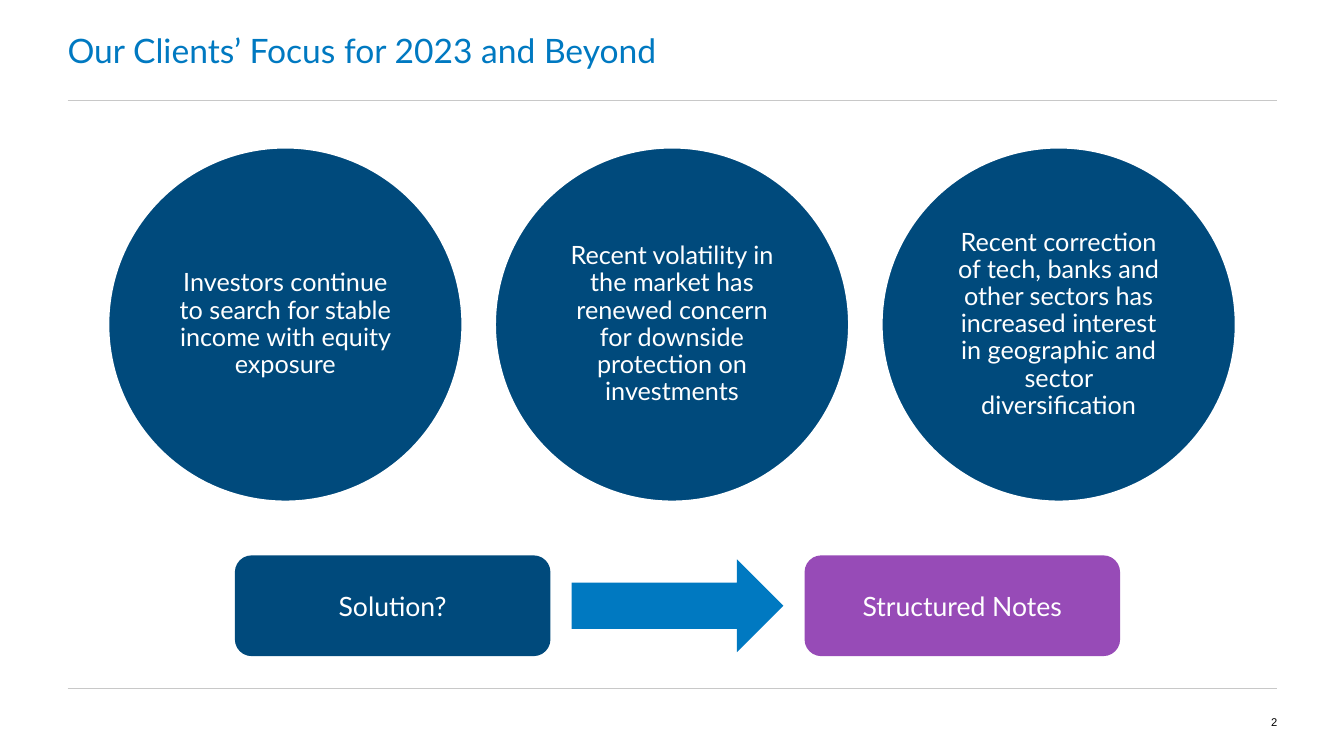
from dataclasses import dataclass

from pptx import Presentation
from pptx.dml.color import RGBColor
from pptx.enum.shapes import MSO_CONNECTOR, MSO_SHAPE
from pptx.enum.text import MSO_ANCHOR, MSO_AUTO_SIZE, PP_ALIGN
from pptx.oxml.ns import qn
from pptx.shapes.autoshape import Shape
from pptx.slide import Slide
from pptx.text.text import TextFrame
from pptx.util import Inches, Pt


@dataclass(frozen=True)
class Theme:
    font: str = "Lato"
    number_font: str = "Arial"
    navy: RGBColor = RGBColor(0x00, 0x4A, 0x7C)
    blue: RGBColor = RGBColor(0x00, 0x79, 0xC1)
    purple: RGBColor = RGBColor(0x97, 0x4B, 0xB7)
    rule: RGBColor = RGBColor(0xC8, 0xC8, 0xC8)
    white: RGBColor = RGBColor(0xFF, 0xFF, 0xFF)
    black: RGBColor = RGBColor(0x00, 0x00, 0x00)
    title_size: int = 24
    circle_size: int = 18
    box_size: int = 19
    number_size: int = 8


@dataclass(frozen=True)
class Box:
    left: float
    top: float
    width: float
    height: float

    def lengths(self) -> tuple[int, int, int, int]:
        return (Inches(self.left), Inches(self.top),
                Inches(self.width), Inches(self.height))


@dataclass(frozen=True)
class Block:
    kind: MSO_SHAPE
    box: Box
    fill: RGBColor
    text: str = ""


THEME = Theme()
MARGIN, CONTENT_WIDTH = 0.67, 12
RULE_TOPS = (6.83, 1)
CIRCLE_LEFT, CIRCLE_TOP, CIRCLE_SIZE, CIRCLE_STEP = 1.07, 1.46, 3.52, 3.835

CONCERNS = (
    "Investors continue to search for stable income with equity exposure",
    "Recent volatility in the market has renewed concern for downside "
    "protection on investments",
    "Recent correction of tech, banks and other sectors has increased "
    "interest in geographic and sector diversification",
)
ANSWER_ROW = (
    Block(MSO_SHAPE.ROUNDED_RECTANGLE, Box(7.98, 5.51, 3.13, 1), THEME.purple,
          "Structured Notes"),
    Block(MSO_SHAPE.RIGHT_ARROW, Box(5.67, 5.55, 2.1, 0.92), THEME.blue),
    Block(MSO_SHAPE.ROUNDED_RECTANGLE, Box(2.33, 5.51, 3.13, 1), THEME.navy,
          "Solution?"),
)


def set_text(tf: TextFrame, text: str, size: int, color: RGBColor,
             align: PP_ALIGN = PP_ALIGN.CENTER, font: str = THEME.font,
             inset_x: float = 0, inset_y: float = 0) -> None:
    tf.word_wrap = True
    tf.auto_size = MSO_AUTO_SIZE.NONE
    tf.vertical_anchor = MSO_ANCHOR.MIDDLE
    tf.margin_left = tf.margin_right = Inches(inset_x)
    tf.margin_top = tf.margin_bottom = Inches(inset_y)
    tf.text = text
    p = tf.paragraphs[0]
    p.alignment = align
    p.font.name = font
    p.font.size = Pt(size)
    p.font.color.rgb = color


def add_rule(s: Slide, top: float) -> None:
    line = s.shapes.add_connector(
        MSO_CONNECTOR.STRAIGHT, Inches(MARGIN), Inches(top),
        Inches(MARGIN + CONTENT_WIDTH), Inches(top))
    line.line.color.rgb = THEME.rule
    line.line.width = Pt(0.75)
    sp_pr = line._element.spPr
    sp_pr.append(sp_pr.makeelement(qn("a:effectLst"), {}))


def add_block(s: Slide, block: Block) -> Shape:
    sp = s.shapes.add_shape(block.kind, *block.box.lengths())
    sp.shadow.inherit = False
    sp.fill.solid()
    sp.fill.fore_color.rgb = block.fill
    sp.line.fill.background()
    if block.text:
        set_text(sp.text_frame, block.text, THEME.box_size, THEME.white)
    return sp


def add_circle(s: Slide, index: int, text: str) -> None:
    box = Box(CIRCLE_LEFT + index * CIRCLE_STEP, CIRCLE_TOP,
              CIRCLE_SIZE, CIRCLE_SIZE)
    sp = add_block(s, Block(MSO_SHAPE.OVAL, box, THEME.navy))
    sp.line.color.rgb = THEME.white
    sp.line.width = Pt(2)
    set_text(sp.text_frame, text, THEME.circle_size, THEME.white,
             inset_x=0.19, inset_y=0.03)
    sp.text_frame.paragraphs[0].line_spacing = 0.9


def add_title(s: Slide, text: str) -> None:
    title = s.shapes.title
    title.left, title.top, title.width, title.height = Box(
        MARGIN, 0, CONTENT_WIDTH, 1).lengths()
    set_text(title.text_frame, text, THEME.title_size, THEME.blue,
             PP_ALIGN.LEFT)


def add_page_number(s: Slide, number: int) -> None:
    tb = s.shapes.add_textbox(*Box(12, 6.83, 0.67, 0.67).lengths())
    set_text(tb.text_frame, str(number), THEME.number_size, THEME.black,
             PP_ALIGN.RIGHT, THEME.number_font)


def main() -> None:
    prs = Presentation()
    prs.slide_width, prs.slide_height = Inches(13.33), Inches(7.5)
    s = prs.slides.add_slide(prs.slide_layouts.get_by_name("Title Only"))
    for top in RULE_TOPS:
        add_rule(s, top)
    add_title(s, "Our Clients’ Focus for 2023 and Beyond")
    add_page_number(s, 2)
    for index, text in enumerate(CONCERNS):
        add_circle(s, index, text)
    for block in ANSWER_ROW:
        add_block(s, block)
    prs.save("out.pptx")


if __name__ == "__main__":
    main()
